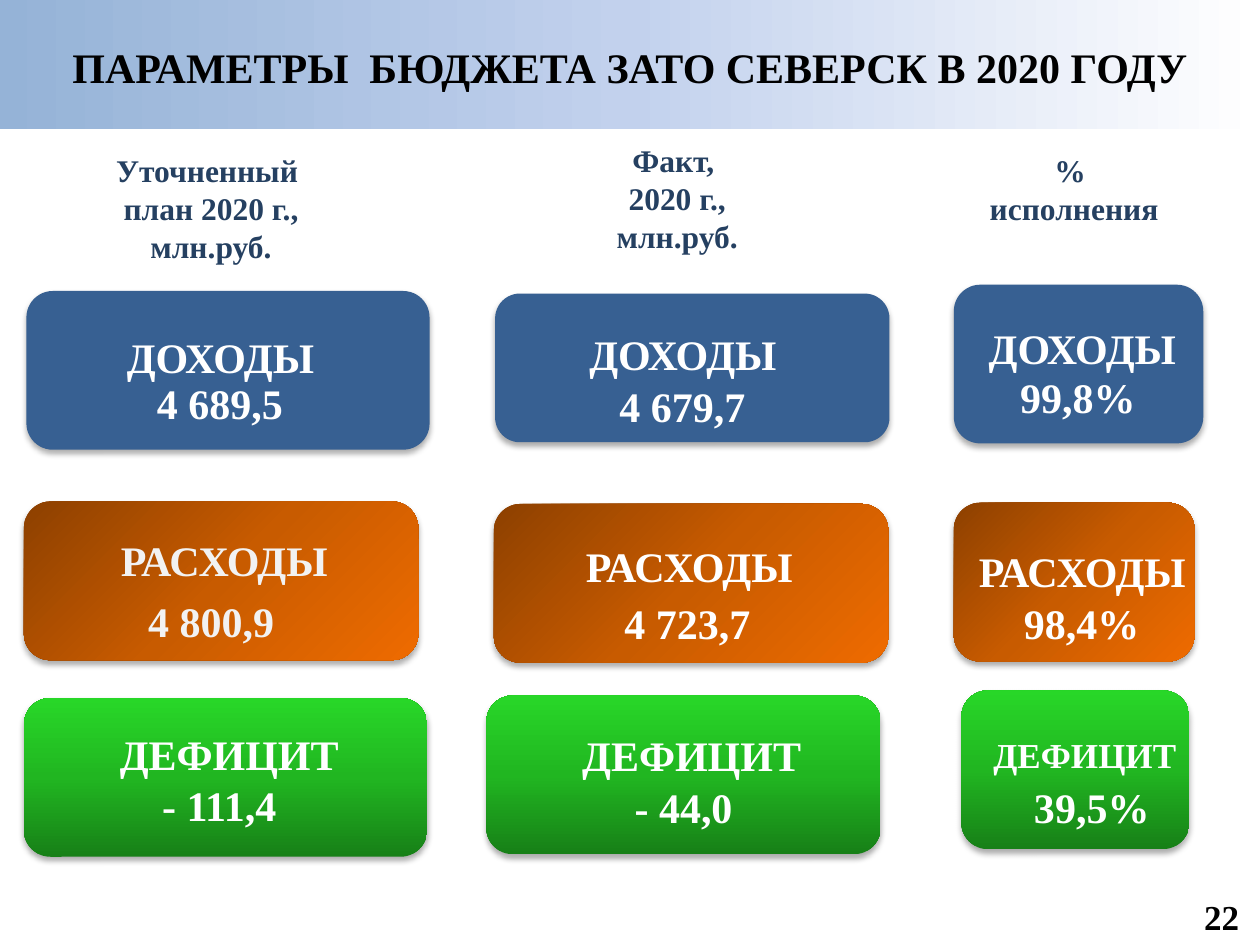
from dataclasses import dataclass

from lxml import etree
from pptx import Presentation
from pptx.dml.color import RGBColor
from pptx.enum import shapes, text
from pptx.oxml import ns
from pptx.util import Inches, Pt


@dataclass(frozen=True)
class Theme:
    """Colours, gradients and type sizes of the slide."""
    font: str = "Times New Roman"
    ink: str = "000000"
    head: str = "254061"
    white: str = "FFFFFF"
    pale: str = "F2F2F2"
    blue: str = "376092"
    band: tuple = ("95B3D7", "C2D1ED", "FFFFFF")
    rust: tuple = ("8D4000", "C85B00", "EE6B00")
    green: tuple = ("178017", "21B621", "28D728")
    big: int = 24
    mid: int = 20
    small: int = 18


T = Theme()

HEADS = [
    ((0.59, 1.15, 2.17, 1.01), "Уточненный \nплан 2020 г.,\nмлн.руб."),
    ((4.29, 1.07, 2.17, 1.01), "Факт, \n2020 г.,\nмлн.руб."),
    ((7.44, 1.15, 2.17, 0.71), "% \nисполнения"),
]

ROWS = [
    ("ДОХОДЫ", T.blue, 0, [
        ((0.21, 2.31, 3.2, 1.26), (0.9, 2.58, 1.7, 0.5),
         (0.18, 2.95, 3.13, 0.5), "4 689,5", T.white, T.big),
        ((3.93, 2.33, 3.13, 1.18), (4.57, 2.56, 1.7, 0.5),
         (4.81, 2.97, 1.21, 0.5), "4 679,7", T.white, T.big),
        ((7.57, 2.26, 1.98, 1.26), (7.74, 2.51, 1.7, 0.5),
         (7.99, 2.9, 1.13, 0.5), "99,8%", T.white, T.big),
    ]),
    ("РАСХОДЫ", T.rust, 45, [
        ((0.19, 3.98, 3.13, 1.26), (0.85, 4.19, 1.86, 0.5),
         (1.07, 4.68, 1.21, 0.5), "4 800,9", T.pale, T.big),
        ((3.92, 4, 3.13, 1.26), (4.54, 4.24, 1.86, 0.5),
         (4.85, 4.69, 1.21, 0.5), "4 723,7", T.white, T.big),
        ((7.57, 3.99, 1.91, 1.26), (7.66, 4.28, 1.86, 0.5),
         (8.02, 4.69, 1.13, 0.5), "98,4%", T.white, T.big),
    ]),
    ("ДЕФИЦИТ", T.green, 270, [
        ((0.19, 5.54, 3.2, 1.26), (0.84, 5.73, 1.96, 0.5),
         (1.18, 6.14, 1.12, 0.5), "- 111,4", T.white, T.big),
        ((3.86, 5.52, 3.13, 1.26), (4.51, 5.74, 1.96, 0.5),
         (4.93, 6.15, 0.99, 0.5), "- 44,0", T.white, T.big),
        ((7.63, 5.48, 1.81, 1.26), (7.78, 5.77, 1.66, 0.44),
         (8.1, 6.15, 1.13, 0.5), "39,5%", T.white, T.mid),
    ]),
]


def place(box):
    """Turn a box in inches into lengths."""
    return [Inches(n) for n in box]


def style(frame, words, size, tint, wrap=True):
    """Fill a text frame with centred bold lines."""
    frame.text = words
    frame.word_wrap = wrap
    frame.vertical_anchor = text.MSO_ANCHOR.TOP
    for para in frame.paragraphs:
        para.alignment = text.PP_ALIGN.CENTER
        for run in para.runs:
            run.font.name = T.font
            run.font.size = Pt(size)
            run.font.bold = True
            run.font.color.rgb = RGBColor.from_string(tint)


def label(slide, box, words, size, tint, wrap=True):
    """Add a text box."""
    style(slide.shapes.add_textbox(*place(box)).text_frame, words, size, tint, wrap)


def blend(shape, tints, angle):
    """Give a shape an evenly spaced linear gradient, angle clockwise."""
    shape.fill.gradient()
    grad = shape._element.spPr.find(ns.qn("a:gradFill"))
    stops = grad.find(ns.qn("a:gsLst"))
    for stop in list(stops):
        stops.remove(stop)
    for i, tint in enumerate(tints):
        pos = 100000 * i // (len(tints) - 1)
        stop = etree.SubElement(stops, ns.qn("a:gs"), pos=str(pos))
        etree.SubElement(stop, ns.qn("a:srgbClr"), val=tint)
    grad.find(ns.qn("a:lin")).set("ang", str(angle * 60000))


def shade(shape):
    """Give a shape a soft shadow below."""
    shape.shadow.inherit = False
    glow = shape._element.spPr.find(ns.qn("a:effectLst"))
    drop = etree.SubElement(glow, ns.qn("a:outerShdw"), blurRad=str(Pt(3.5)),
                            dist=str(Pt(2.2)), dir="5400000", rotWithShape="0")
    tint = etree.SubElement(drop, ns.qn("a:srgbClr"), val=T.ink)
    etree.SubElement(tint, ns.qn("a:alpha"), val="32000")


def header(slide, box):
    """Draw the gradient band and the title on it."""
    band = slide.shapes.add_shape(
        shapes.MSO_SHAPE.FLOWCHART_PROCESS, *place(box))
    band.rotation = 180
    band.shadow.inherit = False
    band.line.fill.background()
    blend(band, T.band, 180)
    title = slide.shapes.title
    band._element.addnext(title._element)
    title.left, title.top, title.width, title.height = place((0, 0.28, 10, 0.5))
    style(title.text_frame, "ПАРАМЕТРЫ  БЮДЖЕТА ЗАТО СЕВЕРСК В 2020 ГОДУ",
          T.big, T.ink)


def card(slide, box, fill, angle):
    """Draw a rounded card with a flat or gradient fill."""
    shape = slide.shapes.add_shape(
        shapes.MSO_SHAPE.ROUNDED_RECTANGLE, *place(box))
    shape.line.fill.background()
    if isinstance(fill, str):
        shape.fill.solid()
        shape.fill.fore_color.rgb = RGBColor.from_string(fill)
    else:
        blend(shape, fill, angle)
    shade(shape)


def row(slide, name, fill, angle, cells):
    """Draw one budget row: card, name and value in each column."""
    for box, top, low, value, tint, size in cells:
        card(slide, box, fill, angle)
        label(slide, top, name, size, tint, False)
        label(slide, low, value, T.big, tint, False)


def main():
    """Build and save the slide."""
    deck = Presentation()
    deck.slide_width, deck.slide_height = Inches(10), Inches(7.5)
    slide = deck.slides.add_slide(deck.slide_layouts[5])
    header(slide, (-0.01, 0, 10.01, 1.02))
    for box, words in HEADS:
        label(slide, box, words, T.small, T.head)
    for part in ROWS:
        row(slide, *part)
    label(slide, (9.39, 7.06, 0.61, 0.44), "22", T.mid, T.ink)
    deck.save("out.pptx")


if __name__ == "__main__":
    main()
